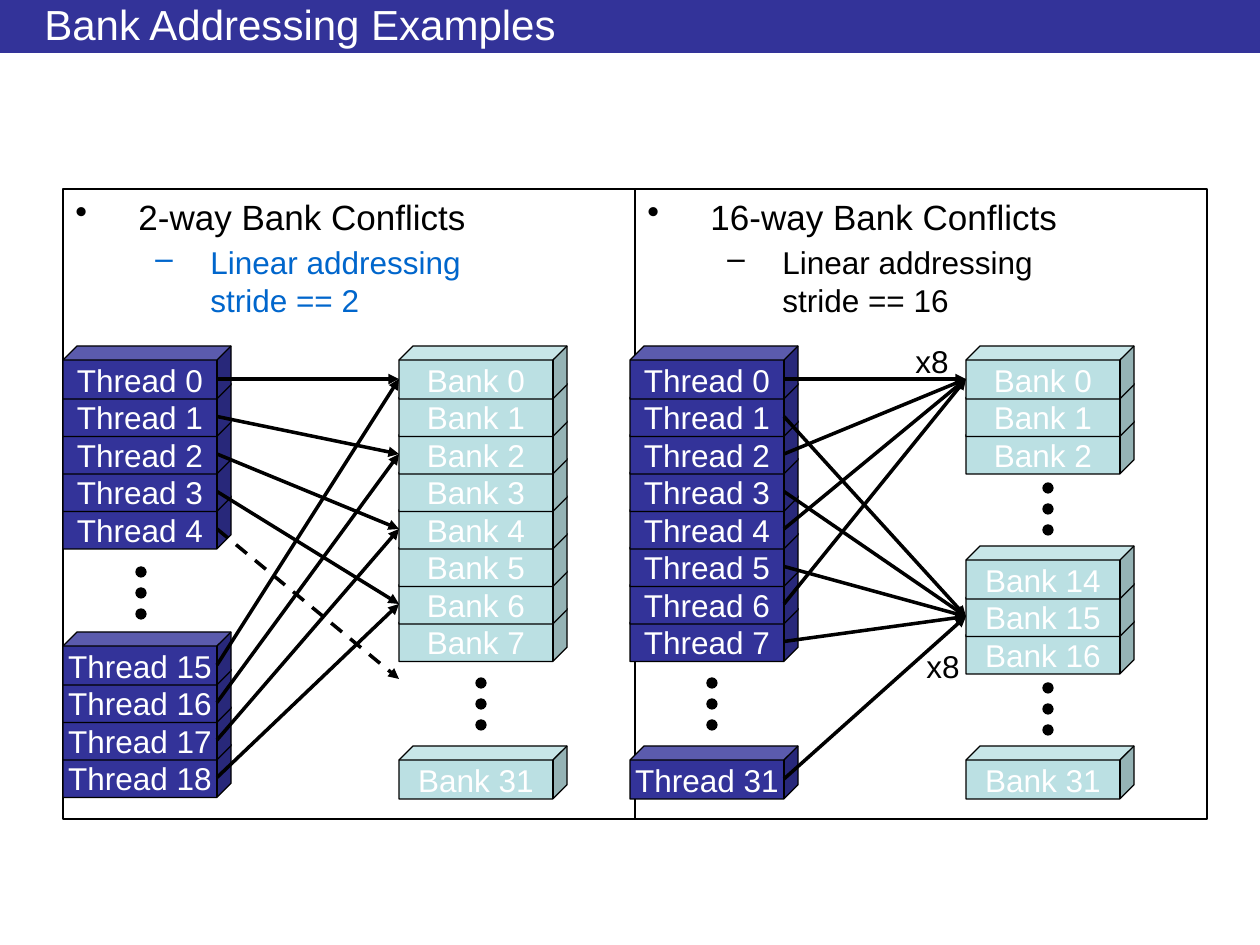
from pptx import Presentation
from pptx import util as u
from pptx.dml.color import RGBColor
from pptx.enum import dml, shapes, text
from pptx.oxml import xmlchemy as xc
from lxml import etree

PX = 914400 / 126
NAVY, PALE, BLUE = "333399", "BBE0E3", "0066CC"
BLACK, WHITE = "000000", "FFFFFF"
KIND = shapes.MSO_SHAPE
PITCH = 37.5            # step from one cube to the next
CUBE_W, CUBE_H = 168, 53
FACE = 154              # right edge of a cube's front
MID = 33                # from a cube's top to the middle of its front
BANK = 336              # offset of the bank column


def px(n):
    return u.Emu(round(n * PX))


def rgb(code):
    return RGBColor.from_string(code)


def sub(node, tag, **attrs):
    item = etree.SubElement(node, xc.qn("a:" + tag))
    for key, val in attrs.items():
        item.set(key, str(val))
    return item


def style(para, size, color):
    for run in para.runs:
        run.font.size = u.Pt(size)
        run.font.name = "Arial"
        run.font.color.rgb = rgb(color)


def shape(home, kind, x, y, w, h, fill=None, line=BLACK):
    item = home.add_shape(kind, px(x), px(y), px(w), px(h))
    item.shadow.inherit = False
    if fill:
        item.fill.solid()
        item.fill.fore_color.rgb = rgb(fill)
    else:
        item.fill.background()
    if line:
        item.line.color.rgb = rgb(line)
        item.line.width = u.Pt(0.75)
    else:
        item.line.fill.background()
    return item


def label(home, x, y, words):
    frame = home.add_textbox(px(x), px(y), px(59), px(50)).text_frame
    frame.word_wrap = False
    frame.text = words
    style(frame.paragraphs[0], 18, BLACK)


def stack(home, x, y, name, first, last, fill):
    """A pile of numbered cubes, drawn from the bottom up."""
    for num in range(last, first - 1, -1):
        top = y + (num - first) * PITCH
        cube = shape(home, KIND.CUBE, x, top, CUBE_W, CUBE_H, fill)
        cube.adjustments[0] = 0.266
        frame = cube.text_frame
        frame.word_wrap = False
        frame.vertical_anchor = text.MSO_ANCHOR.MIDDLE
        frame.text = f"{name} {num}"
        para = frame.paragraphs[0]
        para.alignment = text.PP_ALIGN.CENTER
        style(para, 18, WHITE)


def dots(home, x, y):
    for row in range(3):
        shape(home, KIND.OVAL, x, y + row * 21, 10, 10, BLACK)


def arrow(home, x, y, start, end, dash=False):
    """Links the front of a thread cube to a bank cube, by their tops."""
    line = home.add_connector(
        shapes.MSO_CONNECTOR.STRAIGHT, px(x + FACE), px(y + start + MID),
        px(x + BANK), px(y + end + MID))
    line.line.color.rgb = rgb(BLACK)
    line.line.width = u.Pt(2)
    if dash:
        line.line.dash_style = dml.MSO_LINE.DASH
    sub(line.line._get_or_add_ln(), "tailEnd", type="triangle")
    sub(line._element.spPr, "effectLst")


def header(home, x, y, w, h):
    shape(home, KIND.RECTANGLE, x, y, w, h, NAVY, None)
    box = home.add_textbox(px(x + 32), px(y + 6), px(w - 94), px(36))
    frame = box.text_frame
    frame.word_wrap = True
    frame.vertical_anchor = text.MSO_ANCHOR.MIDDLE
    frame.text = "Bank Addressing Examples"
    style(frame.paragraphs[0], 24, WHITE)


def panel(home, x, y, w, h, head, note, color):
    frame = shape(home, KIND.RECTANGLE, x, y, w, h).text_frame
    frame.word_wrap = True
    frame.vertical_anchor = text.MSO_ANCHOR.TOP
    rows = [(head, 20, BLACK, "•", 63, 63), (note, 18, color, "–", 135, 55)]
    for level, (words, size, tint, mark, left, hang) in enumerate(rows):
        para = frame.add_paragraph() if level else frame.paragraphs[0]
        para.text = words
        para.level = level
        para.alignment = text.PP_ALIGN.LEFT
        para.space_before = u.Pt(size / 5)
        style(para, size, tint)
        props = para._p.get_or_add_pPr()
        props.set("marL", str(px(left)))
        props.set("indent", str(px(-hang)))
        sub(props, "buChar", char=mark)


def two_way(home, x, y):
    # Threads
    stack(home, x, y + 286, "Thread", 15, 18, NAVY)
    stack(home, x, y, "Thread", 0, 4, NAVY)
    dots(home, x + 73, y + 221)
    # Each bank is reached by two threads
    for base in (0, 286):
        for num in range(4):
            arrow(home, x, y, base + num * PITCH, 2 * num * PITCH)
    arrow(home, x, y, 4 * PITCH, 8 * PITCH, dash=True)
    # Banks
    stack(home, x + BANK, y + 400, "Bank", 31, 31, PALE)
    stack(home, x + BANK, y, "Bank", 0, 7, PALE)
    dots(home, x + BANK + 77, y + 332)


def many_way(home, x, y):
    # Threads
    stack(home, x, y + 400, "Thread", 31, 31, NAVY)
    stack(home, x, y, "Thread", 0, 7, NAVY)
    dots(home, x + 77, y + 332)
    # Even threads reach bank 0, odd ones bank 15
    low = 200 + PITCH
    for num in range(8):
        arrow(home, x, y, num * PITCH, low if num % 2 else 0)
    arrow(home, x, y, 400, low)
    # Banks
    for top, first, last in ((400, 31, 31), (200, 14, 16), (0, 0, 2)):
        stack(home, x + BANK, y + top, "Bank", first, last, PALE)
    for top in (337, 137):
        dots(home, x + BANK + 77, y + top)
    label(home, x + 273, y - 10, "x8")
    label(home, x + 284, y + 295, "x8")


def main():
    deck = Presentation()
    deck.slide_width, deck.slide_height = px(1260), px(945)
    home = deck.slides.add_slide(deck.slide_layouts[6]).shapes
    header(home, 0, 0, 1260, 53)
    panel(home, 63, 189, 572, 630, "2-way Bank Conflicts",
          "Linear addressing \vstride == 2", BLUE)
    panel(home, 635, 189, 572, 630, "16-way Bank Conflicts",
          "Linear addressing \vstride == 16", BLACK)
    two_way(home.add_group_shape().shapes, 63, 346)
    many_way(home.add_group_shape().shapes, 630, 346)
    deck.save("out.pptx")


if __name__ == "__main__":
    main()
